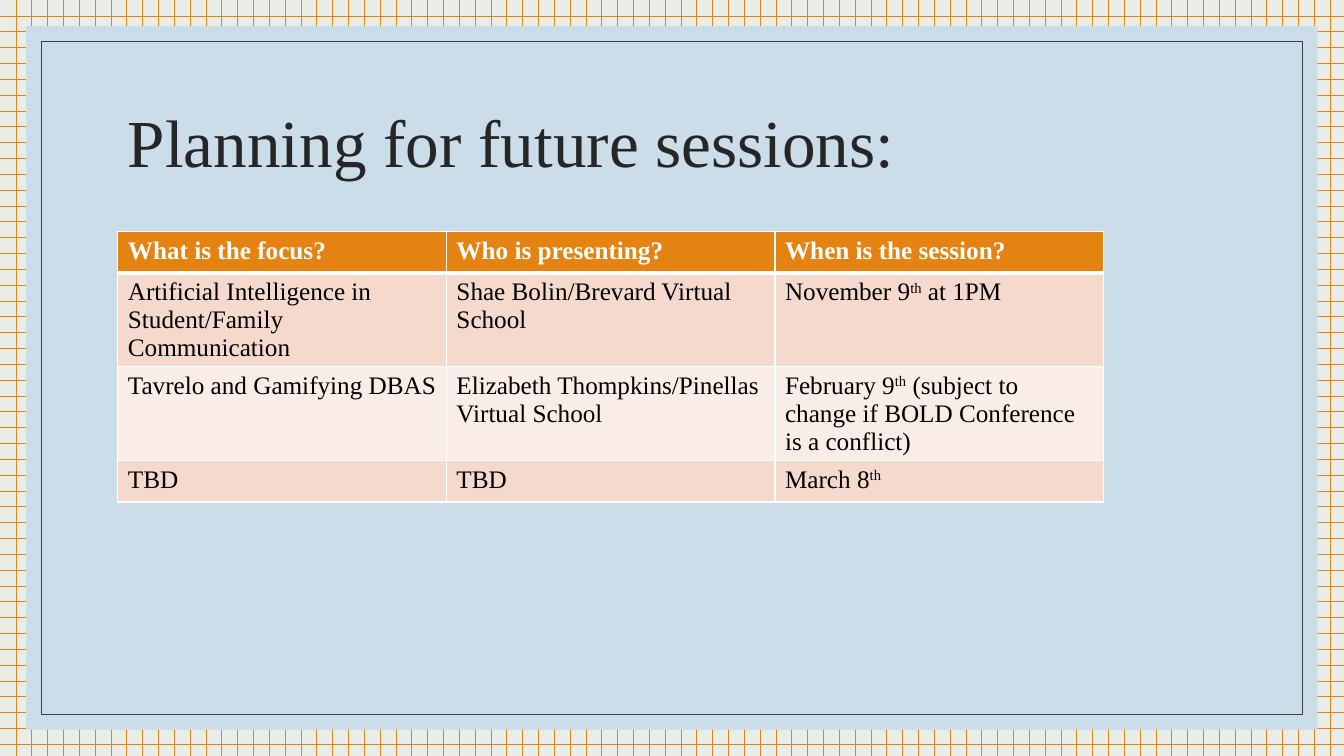
"""Build the slide with the table of planned future sessions."""
import pptx
import pptx.dml.color
import pptx.enum.dml
import pptx.enum.shapes
import pptx.enum.text
import pptx.oxml
import pptx.oxml.ns
import pptx.util
from pptx.util import Cm


def rgb(value):
    return pptx.dml.color.RGBColor.from_string(value)


def add_run(p, text, size, color, bold=False):
    r = p.add_run()
    r.text = text
    font = {"name": "Times New Roman", "size": pptx.util.Pt(size), "bold": bold}
    for key, value in font.items():
        setattr(r.font, key, value)
    r.font.color.rgb = rgb(color)
    return r


prs = pptx.Presentation()
prs.slide_width, prs.slide_height = Cm(33.87), Cm(19.05)
s = prs.slides.add_slide(prs.slide_layouts[5])

bg = s.background.fill
bg.patterned()
bg.pattern = pptx.enum.dml.MSO_PATTERN.DOTTED_GRID
bg.fore_color.rgb = rgb("E48312")
bg.back_color.rgb = rgb("EAECE7")

RECTANGLE = pptx.enum.shapes.MSO_SHAPE.RECTANGLE
for margin, fill, line in [(0.66, "CCDDEA", None), (1.04, None, "404040")]:
    sp = s.shapes.add_shape(RECTANGLE, Cm(margin), Cm(margin),
                            prs.slide_width - 2 * Cm(margin),
                            prs.slide_height - 2 * Cm(margin))
    sp.shadow.inherit = False
    if fill:
        sp.fill.solid()
        sp.fill.fore_color.rgb = rgb(fill)
        sp.line.fill.background()
    else:
        sp.fill.background()
        sp.line.color.rgb = rgb(line)
        sp.line.width = pptx.util.Pt(0.5)

title = s.shapes.title
sp.element.addnext(title.element)
box = {"left": Cm(2.97), "top": Cm(1.78), "width": Cm(27.94), "height": Cm(3.81)}
for key, value in box.items():
    setattr(title, key, value)
tf = title.text_frame
tf.word_wrap = True
tf.vertical_anchor = pptx.enum.text.MSO_ANCHOR.MIDDLE
p = tf.paragraphs[0]
p.alignment = pptx.enum.text.PP_ALIGN.LEFT
p.line_spacing = 0.9
add_run(p, "Planning for future sessions:", 48, "262626")

sessions = [
    ["What is the focus?", "Who is presenting?", "When is the session?"],
    ["Artificial Intelligence in Student/Family Communication",
     "Shae Bolin/Brevard Virtual School", "November 9|th| at 1PM"],
    ["Tavrelo and Gamifying DBAS", "Elizabeth Thompkins/Pinellas Virtual School",
     "February 9|th| (subject to change if BOLD Conference is a conflict)"],
    ["TBD", "TBD", "March 8|th"],
]
row_heights = [1.04, 2.36, 2.36, 1.04]
row_fills = ["E48312", "F5D9CC", "FAEDE7", "F5D9CC"]
table = s.shapes.add_table(4, 3, Cm(2.97), Cm(5.84), Cm(24.84),
                           Cm(sum(row_heights))).table

for i, texts in enumerate(sessions):
    table.rows[i].height = Cm(row_heights[i])
    for j, text in enumerate(texts):
        cell = table.cell(i, j)
        tcPr = cell._tc.get_or_add_tcPr()
        for side in "LRTB":
            heavy = (i, side) in [(0, "B"), (1, "T")]
            tcPr.append(pptx.oxml.parse_xml(
                f'<a:ln{side} {pptx.oxml.ns.nsdecls("a")} w="{38100 if heavy else 12700}">'
                f'<a:solidFill><a:srgbClr val="FFFFFF"/></a:solidFill></a:ln{side}>'))
        cell.fill.solid()
        cell.fill.fore_color.rgb = rgb(row_fills[i])
        p = cell.text_frame.paragraphs[0]
        for k, part in enumerate(text.split("|")):
            r = add_run(p, part, 18, "000000" if i else "FFFFFF", i == 0)
            if k == 1:
                r.font._element.set("baseline", "30000")

prs.save("out.pptx")
